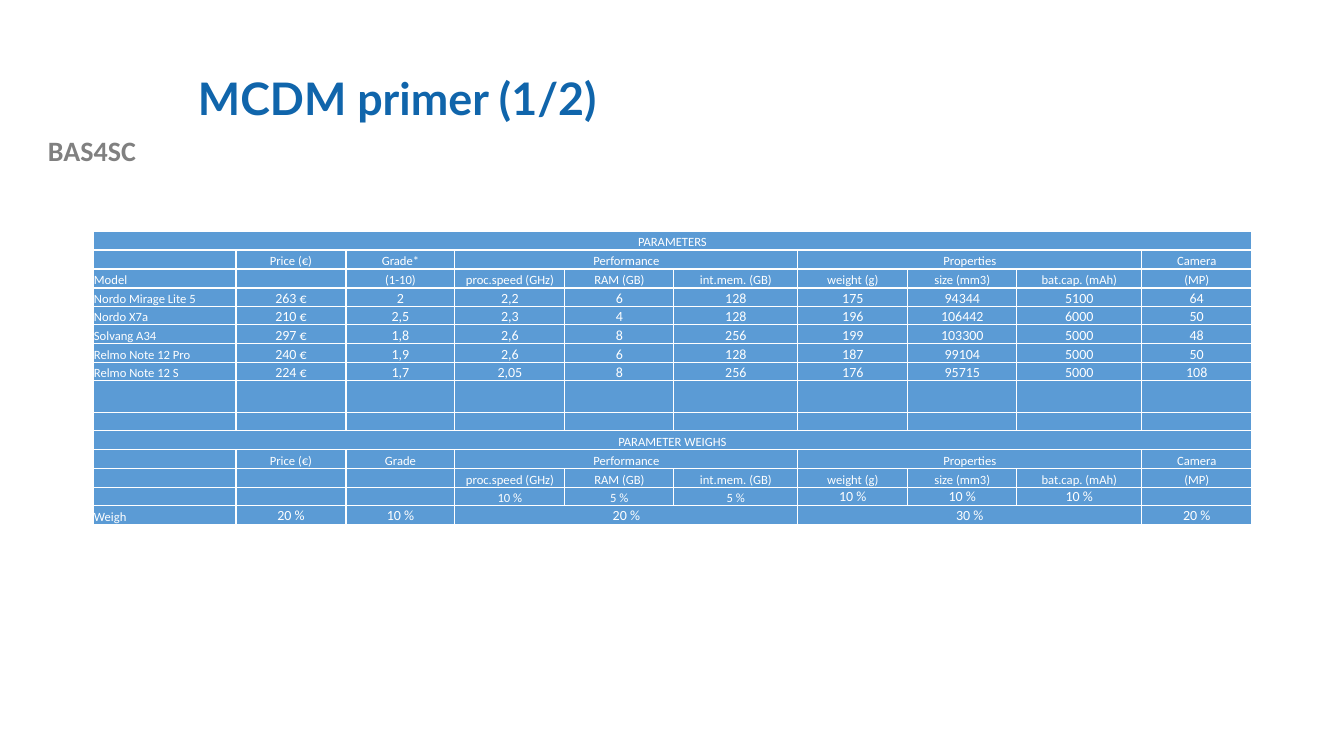
from pptx import Presentation
from pptx.dml.color import RGBColor
from pptx.enum.text import MSO_ANCHOR, PP_ALIGN
from pptx.oxml import parse_xml
from pptx.oxml.ns import nsdecls

LEFT, CENTER = PP_ALIGN.LEFT, PP_ALIGN.CENTER
MIDDLE, BOTTOM = MSO_ANCHOR.MIDDLE, MSO_ANCHOR.BOTTOM
SCALE = 914400 / 100.8
BLUE, WHITE = "5B9BD5", "FFFFFF"

COLS = [143, 110, 109, 110, 109, 124, 110, 109, 125, 110]
ROWS = [19, 19, 19, 19, 18, 19, 19, 18, 32, 18, 19, 19, 19, 18, 19]

# None continues the cell to its left; "" is an empty cell.
BLANK = [""] * 10
UNITS = ["proc.speed (GHz)", "RAM (GB)", "int.mem. (GB)", "weight (g)",
         "size (mm3)", "bat.cap. (mAh)", "(MP)"]


def banner(text):
    return [text] + [None] * 9


def heads(grade):
    return ["", "Price (€)", grade, "Performance", None, None,
            "Properties", None, None, "Camera"]


CELLS = [
    banner("PARAMETERS"),
    heads("Grade*"),
    ["Model", "", "(1-10)"] + UNITS,
    ["Nordo Mirage Lite 5", "263 €", "2", "2,2", "6", "128", "175", "94344", "5100", "64"],
    ["Nordo X7a", "210 €", "2,5", "2,3", "4", "128", "196", "106442", "6000", "50"],
    ["Solvang A34", "297 €", "1,8", "2,6", "8", "256", "199", "103300", "5000", "48"],
    ["Relmo Note 12 Pro", "240 €", "1,9", "2,6", "6", "128", "187", "99104", "5000", "50"],
    ["Relmo Note 12 S", "224 €", "1,7", "2,05", "8", "256", "176", "95715", "5000", "108"],
    BLANK,
    BLANK,
    banner("PARAMETER WEIGHS"),
    heads("Grade"),
    ["", "", ""] + UNITS,
    ["", "", "", "10 %", "5 %", "5 %", "10 %", "10 %", "10 %", ""],
    ["Weigh", "20 %", "10 %", "20 %", None, None, "30 %", None, None, "20 %"],
]
SPLIT = 13  # row of partial weights, whose left half is set smaller


def px(n):
    return round(n * SCALE)


def color(code):
    return RGBColor.from_string(code)


def write(frame, text, size, tint, font="Calibri", bold=False, align=LEFT, space=None):
    para = frame.paragraphs[0]
    para.alignment = align
    para.line_spacing = space
    if not text:
        para._p.append(parse_xml(f'<a:endParaRPr {nsdecls("a")} sz="{size * 100}"/>'))
        return
    run = para.add_run()
    run.text = text
    run.font.size = size * 12700
    run.font.name = font
    run.font.bold = bold
    run.font.color.rgb = color(tint)


def edge(cell):
    """Draw white 1 pt borders; they must come before the fill."""
    props = cell._tc.get_or_add_tcPr()
    for i, side in enumerate(("lnL", "lnR", "lnT", "lnB")):
        props.insert(i, parse_xml(
            f'<a:{side} {nsdecls("a")} w="12700"><a:solidFill>'
            f'<a:srgbClr val="{WHITE}"/></a:solidFill></a:{side}>'))


def title(slide, x, y, w, h):
    head = slide.shapes.title
    head.left, head.top, head.width, head.height = map(px, (x, y, w, h))
    frame = head.text_frame
    frame.word_wrap = True
    frame.vertical_anchor = MIDDLE
    write(frame, " MCDM primer (1/2)", 32, "1065AB", font="Lato", bold=True, space=0.9)


def label(slide, x, y, w, h):
    frame = slide.shapes.add_textbox(*map(px, (x, y, w, h))).text_frame
    frame.word_wrap = True
    write(frame, "BAS4SC", 20, "808080", bold=True, align=CENTER)


def grid(slide, x, y):
    box = map(px, (x, y, sum(COLS), sum(ROWS)))
    table = slide.shapes.add_table(len(ROWS), len(COLS), *box).table
    for col, width in zip(table.columns, COLS):
        col.width = px(width)
    for row, height in zip(table.rows, ROWS):
        row.height = px(height)
    for r, line in enumerate(CELLS):
        start = 0
        for c, text in enumerate(line):
            cell = table.cell(r, c)
            cell.fill.solid()
            cell.fill.fore_color.rgb = color(BLUE)
            edge(cell)
            cell.vertical_anchor = BOTTOM
            cell.margin_left = cell.margin_right = cell.margin_top = px(1)
            cell.margin_bottom = 0
            small = r == SPLIT and c < 6
            size = 10 if text and text[0].isdigit() and not small else 9
            align = CENTER if c or line[1] is None else LEFT
            write(cell.text_frame, text, size, WHITE, align=align)
            if text is not None:
                start = c
            elif c + 1 == len(line) or line[c + 1] is not None:
                table.cell(r, start).merge(cell)


def main():
    deck = Presentation()
    deck.slide_width, deck.slide_height = px(1344), px(756)
    slide = deck.slides.add_slide(deck.slide_layouts[5])
    label(slide, 0, 129, 184, 43)
    title(slide, 177, 40, 1075, 123)
    grid(slide, 93, 231)
    deck.save("out.pptx")


if __name__ == "__main__":
    main()
